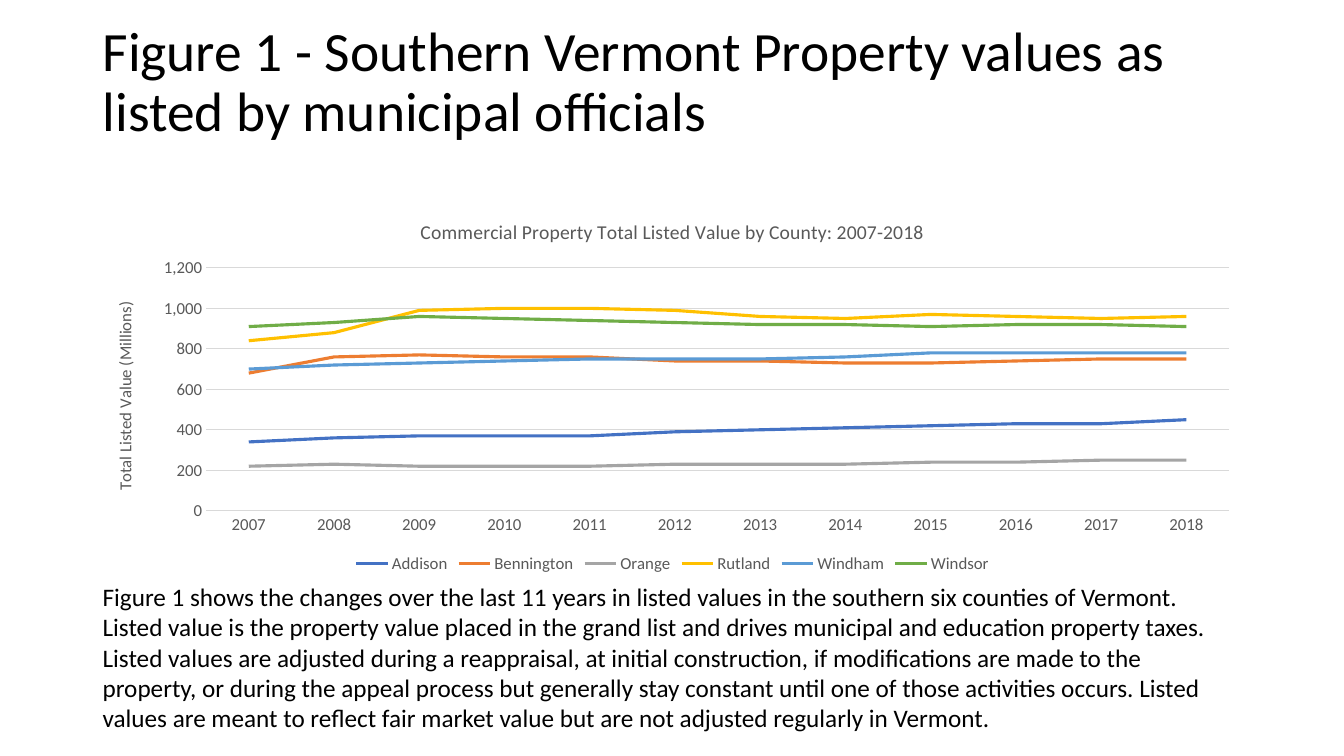
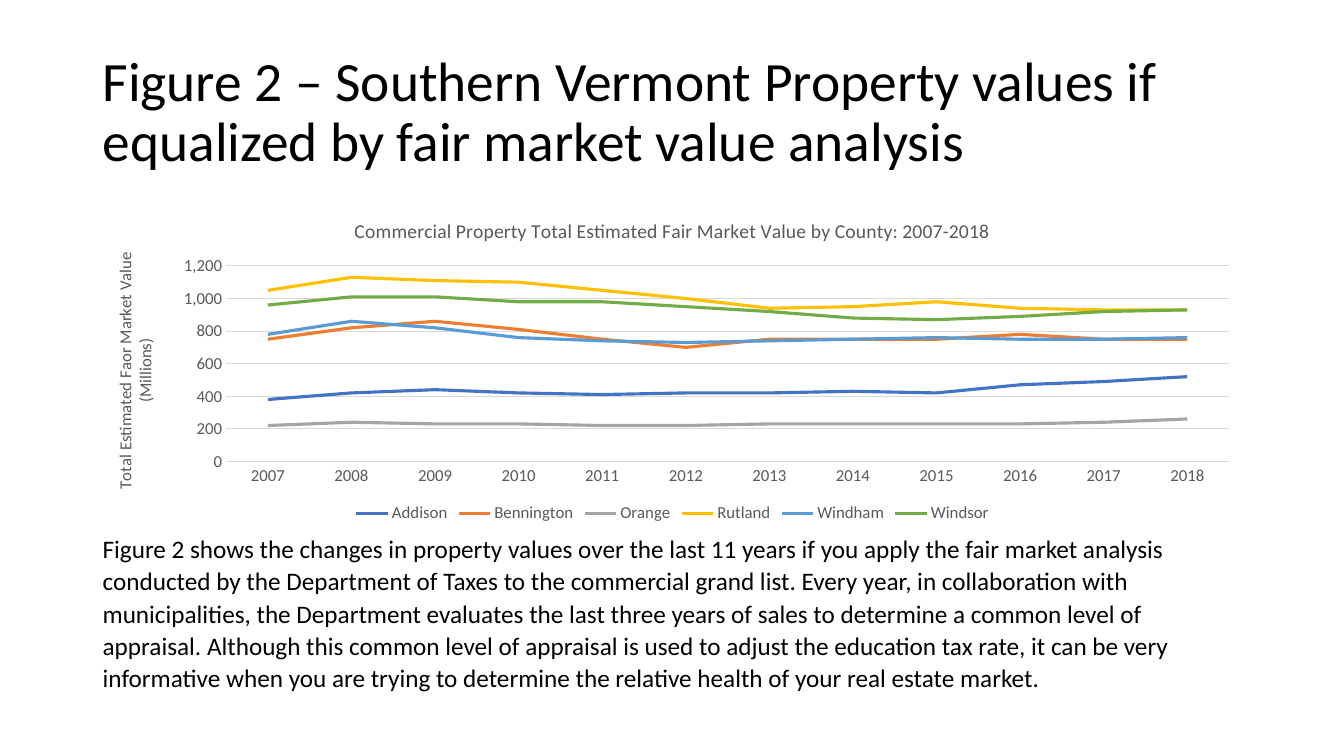
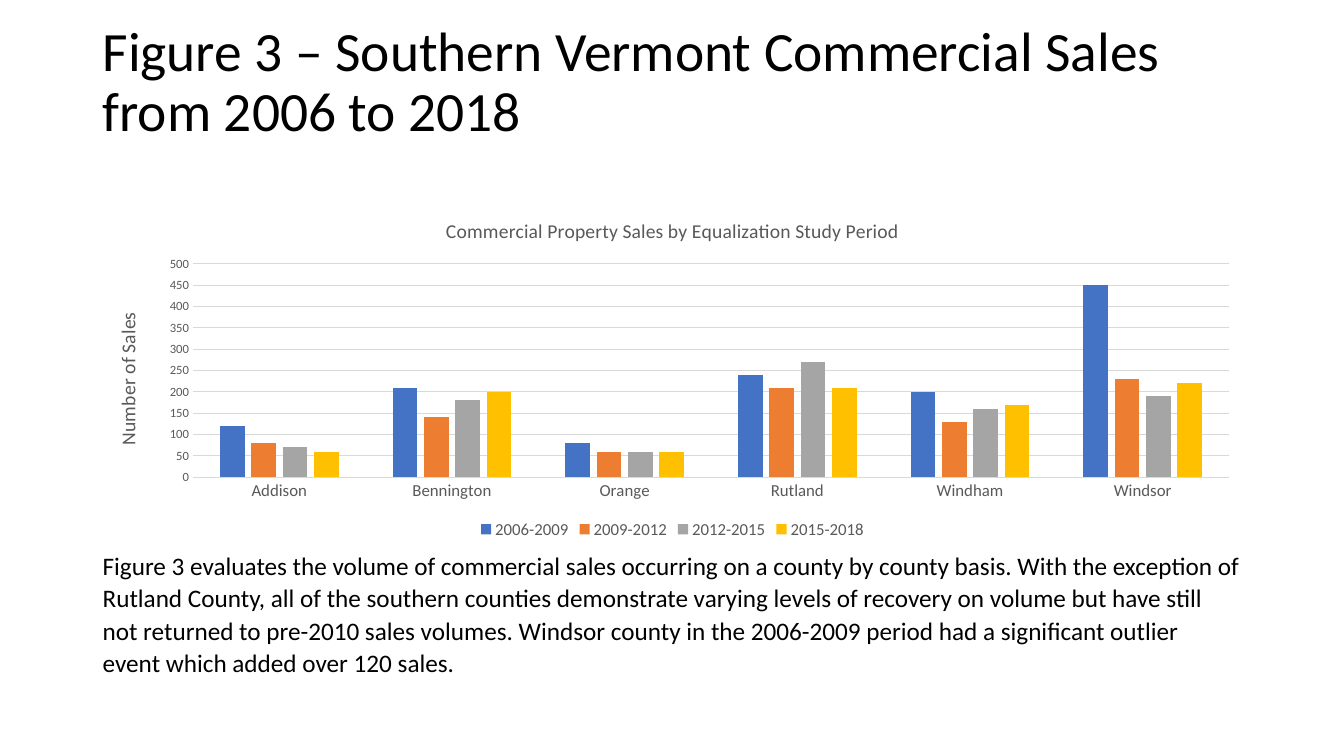
from pptx import Presentation
from pptx.chart.data import CategoryChartData
from pptx.dml.color import RGBColor
from pptx.enum import chart as ch, text
from pptx.util import Inches, Pt

FONT = "Calibri"
BLACK = RGBColor(0x00, 0x00, 0x00)
GRAY = RGBColor(0x59, 0x59, 0x59)
GRID = RGBColor(0xD9, 0xD9, 0xD9)
BLUE = RGBColor(0x44, 0x72, 0xC4)
ORANGE = RGBColor(0xED, 0x7D, 0x31)
SILVER = RGBColor(0xA5, 0xA5, 0xA5)
GOLD = RGBColor(0xFF, 0xC0, 0x00)
SKY = RGBColor(0x5B, 0x9B, 0xD5)
GREEN = RGBColor(0x70, 0xAD, 0x47)
PALETTE = (BLUE, ORANGE, SILVER, GOLD, SKY, GREEN)

LEFT, WIDTH = 0.92, 11.5
TITLE_TOP, TITLE_HEIGHT = 0.4, 1.45
CHART_TOP = 2
YEARS = [str(year) for year in range(2007, 2019)]
COUNTIES = ["Addison", "Bennington", "Orange", "Rutland", "Windham", "Windsor"]
PERIODS = ["2006-2009", "2009-2012", "2012-2015", "2015-2018"]

LISTED_VALUES = [
    (340, 360, 370, 370, 370, 390, 400, 410, 420, 430, 430, 450),
    (680, 760, 770, 760, 760, 740, 740, 730, 730, 740, 750, 750),
    (220, 230, 220, 220, 220, 230, 230, 230, 240, 240, 250, 250),
    (840, 880, 990, 1000, 1000, 990, 960, 950, 970, 960, 950, 960),
    (700, 720, 730, 740, 750, 750, 750, 760, 780, 780, 780, 780),
    (910, 930, 960, 950, 940, 930, 920, 920, 910, 920, 920, 910),
]
MARKET_VALUES = [
    (380, 420, 440, 420, 410, 420, 420, 430, 420, 470, 490, 520),
    (750, 820, 860, 810, 750, 700, 750, 750, 750, 780, 750, 750),
    (220, 240, 230, 230, 220, 220, 230, 230, 230, 230, 240, 260),
    (1050, 1130, 1110, 1100, 1050, 1000, 940, 950, 980, 940, 930, 930),
    (780, 860, 820, 760, 740, 730, 740, 750, 760, 750, 750, 760),
    (960, 1010, 1010, 980, 980, 950, 920, 880, 870, 890, 920, 930),
]
SALES = [
    (120, 210, 80, 240, 200, 450),
    (80, 140, 60, 210, 130, 230),
    (70, 180, 60, 270, 160, 190),
    (60, 200, 60, 210, 170, 220),
]

LISTED_NOTE = (
    "Figure 1 shows the changes over the last 11 years in listed values in the southern six "
    "counties of Vermont. Listed value is the property value placed in the grand list and drives "
    "municipal and education property taxes. Listed values are adjusted during a reappraisal, at "
    "initial construction, if modifications are made to the property, or during the appeal process "
    "but generally stay constant until one of those activities occurs. Listed values are meant to "
    "reflect fair market value but are not adjusted regularly in Vermont."
)
MARKET_NOTE = (
    "Figure 2 shows the changes in property values over the last 11 years if you apply the fair "
    "market analysis conducted by the Department of Taxes to the commercial grand list. Every year, "
    "in collaboration with municipalities, the Department evaluates the last three years of sales "
    "to determine a common level of appraisal. Although this common level of appraisal is used to "
    "adjust the education tax rate, it can be very informative when you are trying to determine "
    "the relative health of your real estate market."
)
SALES_NOTE = (
    "Figure 3 evaluates the volume of commercial sales occurring on a county by county basis. With "
    "the exception of Rutland County, all of the southern counties demonstrate varying levels of "
    "recovery on volume but have still not returned to pre-2010 sales volumes. Windsor county in "
    "the 2006-2009 period had a significant outlier event which added over 120 sales."
)


def set_font(font, size, color=GRAY):
    """Give a font the deck's typeface with a size and colour."""
    font.name, font.size, font.bold = FONT, Pt(size), False
    font.color.rgb = color


def add_text(slide, box, content, size, line_spacing):
    """Add a wrapped one-paragraph text box and return its frame."""
    tf = slide.shapes.add_textbox(*map(Inches, box)).text_frame
    tf.word_wrap = True
    p = tf.paragraphs[0]
    p.text = content
    p.line_spacing = line_spacing
    set_font(p.font, size, BLACK)
    return tf


def add_title(slide, content, bottom_inset):
    """Add the slide title, raised by its bottom inset."""
    tf = add_text(slide, (LEFT, TITLE_TOP, WIDTH, TITLE_HEIGHT), content, 39.6, 0.9)
    tf.vertical_anchor = text.MSO_ANCHOR.MIDDLE
    tf.margin_bottom = Inches(bottom_inset)


def add_note(slide, box, content, line_spacing, space_after):
    """Add the explanation below the chart."""
    tf = add_text(slide, box, content, 18, line_spacing)
    tf.paragraphs[0].space_after = Pt(space_after)
    tf.auto_size = text.MSO_AUTO_SIZE.SHAPE_TO_FIT_TEXT


def set_heading(tf, content, size):
    """Fill a chart or axis title."""
    p = tf.paragraphs[0]
    p.text = content
    set_font(p.font, size)


def style_axes(chart, axis_title, title_size, label_size, top, step):
    """Style both axes and the gridlines."""
    cat, val = chart.category_axis, chart.value_axis
    for axis, size in ((cat, 12), (val, label_size)):
        axis.major_tick_mark = axis.minor_tick_mark = ch.XL_TICK_MARK.NONE
        set_font(axis.tick_labels.font, size)
    val.has_major_gridlines = True
    for line in (cat.format.line, val.major_gridlines.format.line):
        line.color.rgb = GRID
        line.width = Pt(0.75)
    val.format.line.fill.background()
    val.minimum_scale, val.maximum_scale, val.major_unit = 0, top, step
    val.tick_labels.number_format = "#,##0"
    val.tick_labels.number_format_is_linked = False
    set_heading(val.axis_title.text_frame, axis_title, title_size)
    for body in val.axis_title._element.xpath("c:tx/c:rich/a:bodyPr"):
        body.set("rot", "-5400000")
        body.set("vert", "horz")


def add_chart(slide, box, kind, categories, names, rows, title):
    """Add a titled chart with a legend below it."""
    data = CategoryChartData()
    data.categories = categories
    for name, values in zip(names, rows):
        data.add_series(name, values)
    chart = slide.shapes.add_chart(kind, *map(Inches, box), data).chart
    set_font(chart.font, 12)
    chart.has_title = True
    set_heading(chart.chart_title.text_frame, title, 14)
    chart.chart_title.include_in_layout = False
    chart.has_legend = True
    chart.legend.position = ch.XL_LEGEND_POSITION.BOTTOM
    chart.legend.include_in_layout = False
    set_font(chart.legend.font, 12)
    chart.plots[0].vary_by_categories = False
    return chart


def add_line_chart(slide, height, rows, title, axis_title):
    """Add a line chart of county values by year."""
    chart = add_chart(slide, (LEFT, CHART_TOP, WIDTH, height), ch.XL_CHART_TYPE.LINE,
                      YEARS, COUNTIES, rows, title)
    style_axes(chart, axis_title, 12, 12, 1200, 200)
    for series, color in zip(chart.plots[0].series, PALETTE):
        series.smooth = False
        series.marker.style = ch.XL_MARKER_STYLE.NONE
        series.format.line.color.rgb = color
        series.format.line.width = Pt(2.25)


def add_column_chart(slide, height, rows, title, axis_title):
    """Add a clustered column chart of sales by county."""
    chart = add_chart(slide, (LEFT, CHART_TOP, WIDTH, height), ch.XL_CHART_TYPE.COLUMN_CLUSTERED,
                      COUNTIES, PERIODS, rows, title)
    style_axes(chart, axis_title, 14, 9, 500, 50)
    plot = chart.plots[0]
    plot.gap_width, plot.overlap = 219, -27
    for series, color in zip(plot.series, PALETTE):
        series.format.fill.solid()
        series.format.fill.fore_color.rgb = color


def main():
    """Build and save the deck."""
    prs = Presentation()
    prs.slide_width, prs.slide_height = Inches(13.33), Inches(7.5)
    listed, market, sales = (prs.slides.add_slide(prs.slide_layouts[6]) for _ in range(3))

    add_title(listed, "Figure 1 - Southern Vermont Property values as listed by municipal officials", 0.65)
    add_line_chart(listed, 3.73, LISTED_VALUES,
                   "Commercial Property Total Listed Value by County: 2007-2018",
                   "Total Listed Value (Millions)")
    add_note(listed, (LEFT, 5.72, 11.4, 1.62), LISTED_NOTE, 1.0, 0)

    add_title(market, "Figure 2 – Southern Vermont Property values if equalized by fair market value analysis", 0.05)
    add_line_chart(market, 3.23, MARKET_VALUES,
                   "Commercial Property Total Estimated Fair Market Value by County: 2007-2018",
                   "Total Estimated Faor Market Value (Millions)")
    add_note(market, (LEFT, 5.22, WIDTH, 1.71), MARKET_NOTE, 1.07, 8)

    add_title(sales, "Figure 3 – Southern Vermont Commercial Sales from 2006 to 2018", 0.65)
    add_column_chart(sales, 3.39, SALES,
                     "Commercial Property Sales by Equalization Study Period", "Number of Sales")
    add_note(sales, (LEFT, 5.39, WIDTH, 1.38), SALES_NOTE, 1.07, 8)

    prs.save("out.pptx")


if __name__ == "__main__":
    main()
